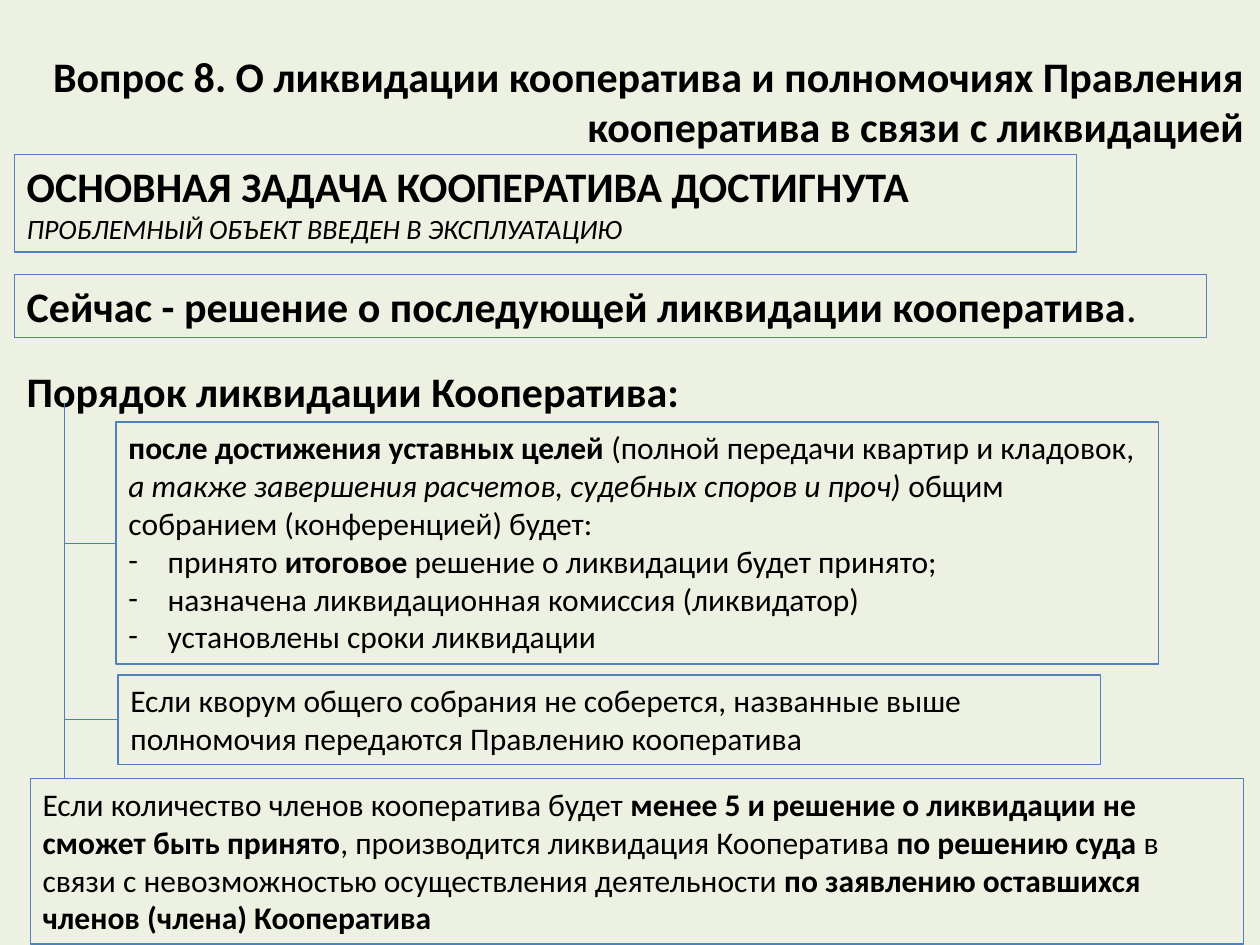
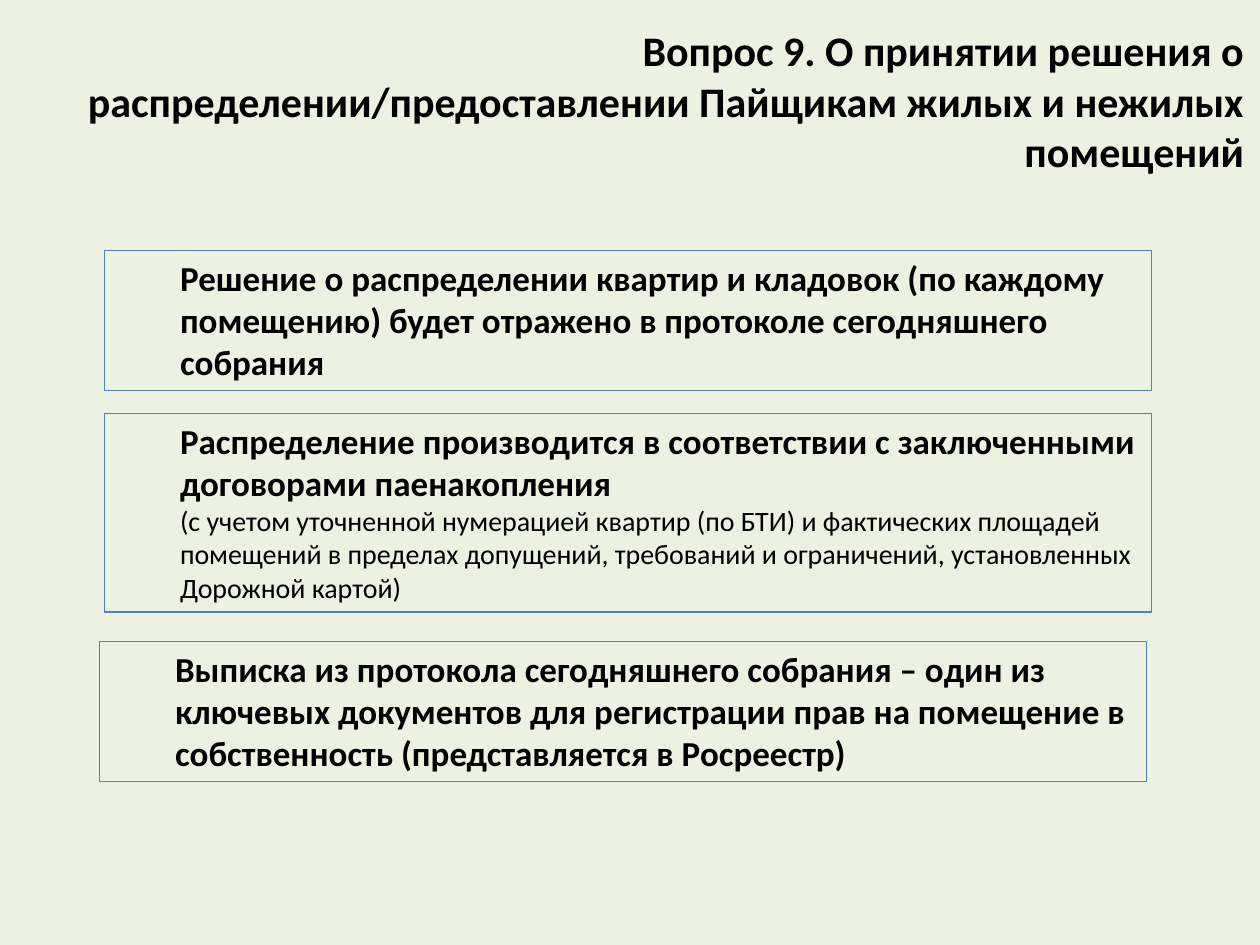
from pptx import Presentation
from pptx.dml.color import RGBColor as Rgb
from pptx.enum.shapes import MSO_CONNECTOR as Link, MSO_SHAPE as Form
from pptx.enum.text import MSO_ANCHOR as Anchor, MSO_AUTO_SIZE as Auto, PP_ALIGN as Align
from pptx.oxml.ns import qn
from pptx.util import Cm, Pt
from lxml.etree import SubElement as Sub

HUE = {"back": "EDF1E2", "text": "000000", "edge": "4F81BD", "line": "4B7EBC"}
LOOK = {
    "": {"bold": False, "italic": False},
    "b": {"bold": True, "italic": False},
    "i": {"bold": False, "italic": True},
}
TITLE = (0.74, 0.03, 24.59, 3.99)


def write(shape, paras, side=Align.LEFT, **more):
    frame = shape.text_frame
    form = {"word_wrap": True, "vertical_anchor": Anchor.TOP,
            "auto_size": Auto.SHAPE_TO_FIT_TEXT, **more}
    for key, val in form.items():
        setattr(frame, key, val)
    for num, (size, kind, runs) in enumerate(paras):
        para = frame.paragraphs[0] if num == 0 else frame.add_paragraph()
        para.alignment = side
        props = para._p.get_or_add_pPr()
        if kind == "dash":
            props.set("marL", str(Cm(0.79)))
            props.set("indent", str(-Cm(0.79)))
            Sub(props, qn("a:buFont"), typeface="Calibri")
            Sub(props, qn("a:buChar"), char="-")
        elif kind == "inset":
            para.level = 1
            props.set("marL", str(Cm(1.27)))
            props.set("indent", "0")
        for text, look in runs:
            run = para.add_run()
            run.text = text
            font = {"name": "Calibri", "size": Pt(size), **LOOK[look]}
            for key, val in font.items():
                setattr(run.font, key, val)
            run.font.color.rgb = Rgb.from_string(HUE["text"])


def frame_box(slide, spot, paras):
    box = slide.shapes.add_shape(Form.RECTANGLE, *map(Cm, spot))
    box.shadow.inherit = False
    box.fill.background()
    box.line.color.rgb = Rgb.from_string(HUE["edge"])
    box.line.width = Pt(0.75)
    write(box, paras)
    return box


deck = Presentation()
deck.slide_width, deck.slide_height = Cm(25.4), Cm(19.05)

heads = [
    "Вопрос 8. О ликвидации кооператива и полномочиях Правления кооператива в связи с ликвидацией",
    "Вопрос 9. О принятии решения о распределении/предоставлении Пайщикам жилых и нежилых помещений",
]
pages = []
for head in heads:
    page = deck.slides.add_slide(deck.slide_layouts[6])
    page.background.fill.solid()
    page.background.fill.fore_color.rgb = Rgb.from_string(HUE["back"])
    title = page.shapes.add_textbox(*map(Cm, TITLE))
    write(title, [(24, "", [(head, "b")])], Align.RIGHT,
          vertical_anchor=Anchor.MIDDLE, auto_size=Auto.NONE)
    pages.append(page)
close, share = pages

frame_box(close, (0.29, 3.12, 21.41, 1.96), [
    (24, "", [("ОСНОВНАЯ ЗАДАЧА КООПЕРАТИВА ДОСТИГНУТА", "b")]),
    (16, "", [("ПРОБЛЕМНЫЙ ОБЪЕКТ ВВЕДЕН В ЭКСПЛУАТАЦИЮ", "i")]),
])
frame_box(close, (0.29, 5.54, 24.03, 1.27), [
    (24, "", [("Сейчас - решение о последующей ликвидации кооператива", "b"), (".", "")]),
])
order = close.shapes.add_textbox(*map(Cm, (0.29, 7.24, 25.1, 1.27)))
write(order, [(24, "", [("Порядок ликвидации Кооператива:", "b")])])

steps = frame_box(close, (2.34, 8.51, 21.01, 4.88), [
    (18, "", [
        ("после достижения уставных целей", "b"),
        (" (полной передачи квартир и кладовок,", ""),
        (" а также завершения расчетов, судебных споров и проч) ", "i"),
        ("общим собранием (конференцией) будет:", ""),
    ]),
    (18, "dash", [
        ("принято ", ""),
        ("итоговое", "b"),
        (" решение о ликвидации будет принято;", ""),
    ]),
    (18, "dash", [("назначена ликвидационная комиссия (ликвидатор)", "")]),
    (18, "dash", [("установлены сроки ликвидации", "")]),
])
quorum = frame_box(close, (2.38, 13.61, 19.81, 1.8), [
    (18, "", [("Если кворум общего собрания не соберется, названные выше "
               "полномочия передаются Правлению кооператива", "")]),
])
court = frame_box(close, (0.61, 15.7, 24.46, 3.33), [
    (18, "", [
        ("Если количество членов кооператива будет ", ""),
        ("менее 5 и решение о ликвидации не сможет быть принято", "b"),
        (", производится ликвидация Кооператива ", ""),
        ("по решению суда ", "b"),
        ("в связи с невозможностью осуществления деятельности ", ""),
        ("по заявлению оставшихся членов (члена) Кооператива", "b"),
    ]),
])

trunk = Cm(1.3)
wires = [(trunk, Cm(8.13), court.top, None)]
for box in (steps, quorum):
    mid = box.top + box.height // 2
    wires.append((box.left, mid, mid, box))
for left, top, end, box in wires:
    wire = close.shapes.add_connector(Link.STRAIGHT, left, top, trunk, end)
    if box:
        wire.begin_connect(box, 1)
    wire.line.color.rgb = Rgb.from_string(HUE["line"])
    wire.line.width = Pt(0.75)
    Sub(wire._element.spPr, qn("a:effectLst"))

cards = [
    (2.11, 5.05, 2.82, [
        (20, "Решение о распределении квартир и кладовок (по каждому помещению) "
             "будет отражено в протоколе сегодняшнего собрания", "b"),
    ]),
    (2.11, 8.33, 4.01, [
        (20, "Распределение производится в соответствии с заключенными "
             "договорами паенакопления", "b"),
        (16, "(с учетом уточненной нумерацией квартир (по БТИ) и фактических площадей "
             "помещений в пределах допущений, требований и ограничений, "
             "установленных Дорожной картой)", ""),
    ]),
    (2.01, 12.93, 2.82, [
        (20, "Выписка из протокола сегодняшнего собрания – один из ключевых документов "
             "для регистрации прав на помещение в собственность "
             "(представляется в Росреестр)", "b"),
    ]),
]
for left, top, high, rows in cards:
    frame_box(share, (left, top, 21.11, high),
              [(size, "inset", [(text, look)]) for size, text, look in rows])

deck.save("out.pptx")
